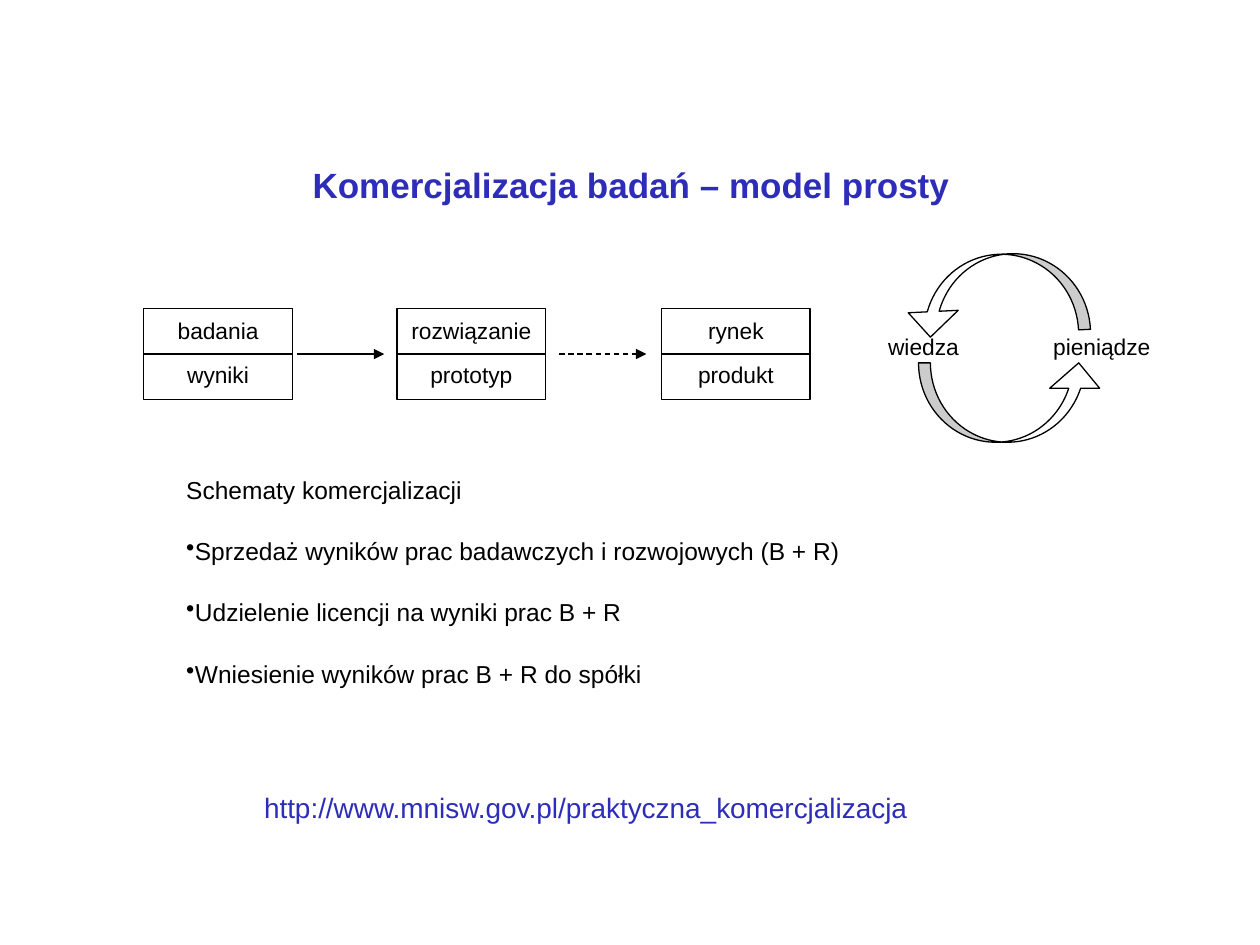
from dataclasses import dataclass

from lxml import etree
from pptx import Presentation
from pptx.dml.color import RGBColor
from pptx.enum.dml import MSO_LINE
from pptx.enum.shapes import MSO_CONNECTOR, MSO_SHAPE
from pptx.enum.text import MSO_ANCHOR, PP_ALIGN
from pptx.oxml.ns import qn
from pptx.util import Inches, Pt

RECTANGLE, CURVED_ARROW = MSO_SHAPE.RECTANGLE, MSO_SHAPE.CURVED_RIGHT_ARROW
STRAIGHT, DASH = MSO_CONNECTOR.STRAIGHT, MSO_LINE.DASH
LEFT, CENTER, TOP = PP_ALIGN.LEFT, PP_ALIGN.CENTER, MSO_ANCHOR.TOP
BLACK, WHITE, BLUE = "000000", "FFFFFF", "2D2DB9"
FONT = "Arial"
LINE_WIDTH = 0.75
LEFT_SIDE, RIGHT_SIDE = 1, 3

# Grid of 100 columns by 75 rows over the slide
COLUMNS, ROWS = 100, 75
SLIDE_WIDTH, SLIDE_HEIGHT = Inches(10), Inches(7.5)


@dataclass
class Area:
    column: float
    row: float
    columns: float
    rows: float

    def emu(self) -> tuple:
        return (col(self.column), row(self.row), col(self.columns), row(self.rows))


@dataclass
class Stage:
    column: float
    activity: str
    result: str


@dataclass
class Step:
    start: float
    end: float
    dashed: bool


@dataclass
class CycleArrow:
    area: Area
    rotation: float


STAGE_ROW, STAGE_COLUMNS, STAGE_ROWS = 24.5, 11.8, 7.2
STAGES = [
    Stage(11.4, "badania", "wyniki"),
    Stage(31.5, "rozwiązanie", "prototyp"),
    Stage(52.5, "rynek", "produkt"),
]
STEPS = [Step(23.6, 30.5, False), Step(44.4, 51.3, True)]
CYCLE = [
    CycleArrow(Area(75.9, 16, 6.3, 14.7), 87.2),
    CycleArrow(Area(77.1, 24.6, 6.3, 14.7), 270),
]
SCHEMES = [
    "Sprzedaż wyników prac badawczych i rozwojowych (B + R)",
    "Udzielenie licencji na wyniki prac B + R",
    "Wniesienie wyników prac B + R do spółki",
]


def col(count: float) -> int:
    return round(SLIDE_WIDTH * count / COLUMNS)


def row(count: float) -> int:
    return round(SLIDE_HEIGHT * count / ROWS)


def rgb(color: str) -> RGBColor:
    return RGBColor.from_string(color)


def write(frame, text: str, *, size: float, color=BLACK, bold=False, align=LEFT,
          before=0, after=0, spacing=1.0, bullet="", tab=0) -> None:
    """Fill the first empty paragraph of the frame, or add a new one."""
    first = frame.paragraphs[0]
    paragraph = frame.add_paragraph() if first.runs else first
    properties = paragraph._p.get_or_add_pPr()
    if bullet:
        properties.set("marL", "0")
        properties.set("indent", "0")
        etree.SubElement(properties, qn("a:buChar"), char=bullet)
    if tab:
        stops = etree.SubElement(properties, qn("a:tabLst"))
        etree.SubElement(stops, qn("a:tab"), pos=str(tab), algn="l")
    paragraph.alignment = align
    paragraph.space_before, paragraph.space_after = Pt(before), Pt(after)
    paragraph.line_spacing = spacing
    run = paragraph.add_run()
    run.text = text
    run.font.name, run.font.size, run.font.bold = FONT, Pt(size), bold
    run.font.color.rgb = rgb(color)


def add_text(shapes, area: Area):
    frame = shapes.add_textbox(*area.emu()).text_frame
    frame.word_wrap = True
    return frame


def add_outlined(shapes, preset, area: Area):
    shape = shapes.add_shape(preset, *area.emu())
    shape.shadow.inherit = False
    shape.fill.solid()
    shape.fill.fore_color.rgb = rgb(WHITE)
    shape.line.color.rgb = rgb(BLACK)
    shape.line.width = Pt(LINE_WIDTH)
    return shape


def add_line(shapes, start: float, end: float, at_row: float, *,
             dashed=False, arrow=False):
    line = shapes.add_connector(STRAIGHT, col(start), row(at_row), col(end), row(at_row))
    line.line.color.rgb = rgb(BLACK)
    line.line.width = Pt(LINE_WIDTH)
    if dashed:
        line.line.dash_style = DASH
    if arrow:
        etree.SubElement(line.line._get_or_add_ln(), qn("a:tailEnd"), type="triangle")
    etree.SubElement(line._element.spPr, qn("a:effectLst"))
    return line


def add_stage(shapes, stage: Stage) -> None:
    box = add_outlined(shapes, RECTANGLE,
                       Area(stage.column, STAGE_ROW, STAGE_COLUMNS, STAGE_ROWS))
    frame = box.text_frame
    frame.word_wrap = True
    frame.vertical_anchor = TOP
    frame.margin_left = frame.margin_right = 0
    frame.margin_top = row(0.6)
    for label in (stage.activity, stage.result):
        write(frame, label, size=13, align=CENTER, after=10)
    divider = add_line(shapes, stage.column, stage.column + STAGE_COLUMNS,
                       STAGE_ROW + STAGE_ROWS / 2)
    divider.begin_connect(box, LEFT_SIDE)
    divider.end_connect(box, RIGHT_SIDE)


def add_cycle_arrow(shapes, cycle_arrow: CycleArrow) -> None:
    shape = add_outlined(shapes, CURVED_ARROW, cycle_arrow.area)
    shape.rotation = cycle_arrow.rotation
    for index, value in enumerate((0.15, 0.63, 0.32)):
        shape.adjustments[index] = value


def main() -> None:
    presentation = Presentation()
    presentation.slide_width, presentation.slide_height = SLIDE_WIDTH, SLIDE_HEIGHT
    shapes = presentation.slides.add_slide(presentation.slide_layouts[6]).shapes

    # Title
    title = add_text(shapes, Area(5.1, 12.5, 90, 7.7))
    write(title, "Komercjalizacja badań – model prosty",
          size=20, color=BLUE, bold=True, align=CENTER)

    # Cycle of knowledge and money
    cycle_labels = add_text(shapes, Area(69.5, 25.9, 23.8, 4.7))
    write(cycle_labels, "wiedza\tpieniądze", size=13, tab=col(13.1))
    for cycle_arrow in CYCLE:
        add_cycle_arrow(shapes, cycle_arrow)

    # Path from research to market
    for stage in STAGES:
        add_stage(shapes, stage)
    for step in STEPS:
        add_line(shapes, step.start, step.end, STAGE_ROW + STAGE_ROWS / 2,
                 dashed=step.dashed, arrow=True)

    # Commercialisation schemes and the web address
    schemes = add_text(shapes, Area(13.8, 34.7, 65.4, 33.4))
    write(schemes, "Schematy komercjalizacji", size=14, spacing=2.08)
    for scheme in SCHEMES:
        write(schemes, scheme, size=14, spacing=2.08, bullet="•")
    write(schemes, "http://www.mnisw.gov.pl/praktyczna_komercjalizacja",
          size=16, color=BLUE, align=CENTER, before=38, spacing=2.08)

    presentation.save("out.pptx")


if __name__ == "__main__":
    main()
